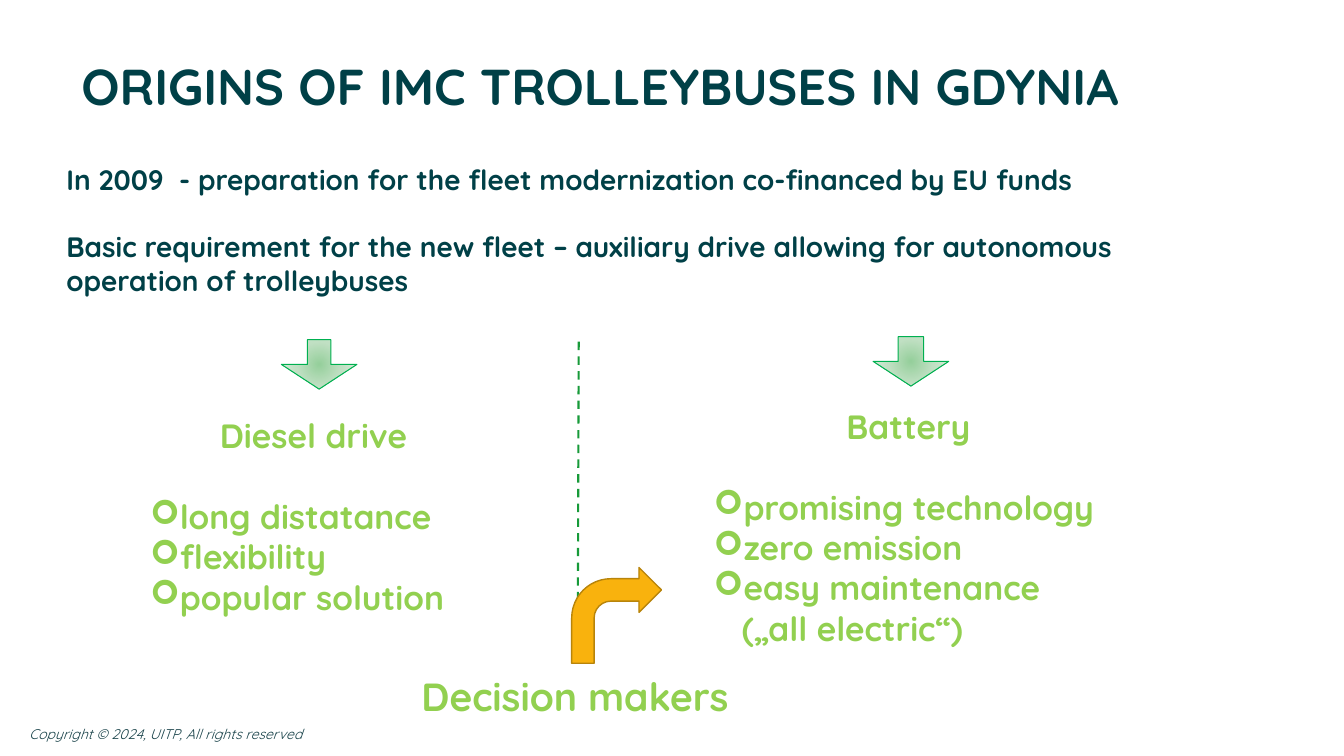
from lxml import etree
from pptx import Presentation
from pptx.dml.color import RGBColor
from pptx.enum import dml, shapes, text
from pptx.oxml import parse_xml
from pptx.oxml.ns import nsdecls, qn
from pptx.util import Inches, Pt

COLORS = {
    "dark": "004047", "footer": "184249", "lime": "92D050",
    "arrow_line": "00B050", "divider": "179A39",
    "turn": "F9B20D", "turn_line": "B8840A",
}
GRADIENT = ((0, "95CF9B"), (50, "C0E0C3"), (100, "E0EFE2"))
HANG = Inches(0.28)


def rgb(name):
    return RGBColor.from_string(COLORS[name])


def add_text(box, lines, size, color, bold=True, italic=False, wrap=True):
    """Add a text box with one paragraph per line and return its paragraphs."""
    tf = s.shapes.add_textbox(*map(Inches, box)).text_frame
    tf.word_wrap = wrap
    tf.text = "\n".join(lines)
    for p in tf.paragraphs:
        for r in p.runs:
            r.font.name, r.font.size = "Quicksand", Pt(size)
            r.font.bold, r.font.italic = bold, italic
            r.font.color.rgb = rgb(color)
    return tf.paragraphs


prs = Presentation()
prs.slide_width, prs.slide_height = Inches(13.33), Inches(7.5)
s = prs.slides.add_slide(prs.slide_layouts[6])

# Footer, title and introduction
add_text((0.19, 7.15, 6.61, 0.27), ["Copyright © 2024, UITP, All rights reserved"],
         10, "footer", bold=False, italic=True)
add_text((0.71, 0.5, 10.63, 0.73), ["ORIGINS OF IMC TROLLEYBUSES IN GDYNIA"], 36, "dark")
intro = add_text((0.56, 1.56, 11.85, 1.45), [
    "In 2009  - preparation for the fleet modernization co-financed by EU funds",
    "Basic requirement for the new fleet – auxiliary drive allowing for autonomous "
    "operation of trolleybuses",
], 20, "dark")
intro[1].space_before = Pt(24)

# Down arrows with a radial gradient
stops = "".join(f'<a:gs pos="{pos * 1000}"><a:srgbClr val="{color}"/></a:gs>'
                for pos, color in GRADIENT)
for left, top, shaft in ((2.79, 3.37, 0.311), (8.66, 3.34, 0.337)):
    sp = s.shapes.add_shape(shapes.MSO_SHAPE.DOWN_ARROW, Inches(left), Inches(top),
                            Inches(0.75), Inches(0.49))
    sp.shadow.inherit = False
    sp.adjustments[0] = shaft
    sp.line.color.rgb = rgb("arrow_line")
    sp.line.width = Pt(0.75)
    sp._element.spPr.find(qn("a:prstGeom")).addnext(parse_xml(
        f'<a:gradFill {nsdecls("a")}><a:gsLst>{stops}</a:gsLst><a:path path="circle">'
        '<a:fillToRect l="50000" t="50000" r="50000" b="50000"/></a:path></a:gradFill>'))

# The two drive options: heading, bulleted points, optional continuation line
options = (
    ((1.39, 4.07, 3.44, 2.79), "Diesel drive",
     ["long distatance", "flexibility", "popular solution"], []),
    ((6.98, 3.98, 4.06, 2.86), "Battery",
     ["promising technology", "zero emission", "easy maintenance"], ["(„all electric“)"]),
)
for box, heading, points, continuation in options:
    paragraphs = add_text(box, [heading, *points, *continuation], 24, "lime")
    paragraphs[0].alignment = text.PP_ALIGN.CENTER
    paragraphs[1].space_before = Pt(28.8)
    for i, p in enumerate(paragraphs[1:]):
        pPr = p._p.get_or_add_pPr()
        pPr.set("marL", str(HANG))
        if i < len(points):
            pPr.set("indent", str(-HANG))
            etree.SubElement(pPr, qn("a:buFont")).set("typeface", "Wingdings")
            etree.SubElement(pPr, qn("a:buChar")).set("char", "➢")

add_text((4.08, 6.62, 3.35, 0.57), ["Decision makers"], 28, "lime", wrap=False)

# Dashed divider and the turn towards the battery option
divider = s.shapes.add_connector(shapes.MSO_CONNECTOR.STRAIGHT, Inches(5.74), Inches(3.39),
                                 Inches(5.73), Inches(6.36))
divider.line.color.rgb = rgb("divider")
divider.line.width = Pt(1.5)
divider.line.dash_style = dml.MSO_LINE.DASH
etree.SubElement(divider._element.spPr, qn("a:effectLst"))

turn = s.shapes.add_shape(shapes.MSO_SHAPE.BENT_ARROW, Inches(5.67), Inches(5.63),
                          Inches(0.89), Inches(0.95))
turn.shadow.inherit = False
turn.fill.solid()
turn.fill.fore_color.rgb = rgb("turn")
turn.line.color.rgb = rgb("turn_line")
turn.line.width = Pt(1)

prs.save("out.pptx")
